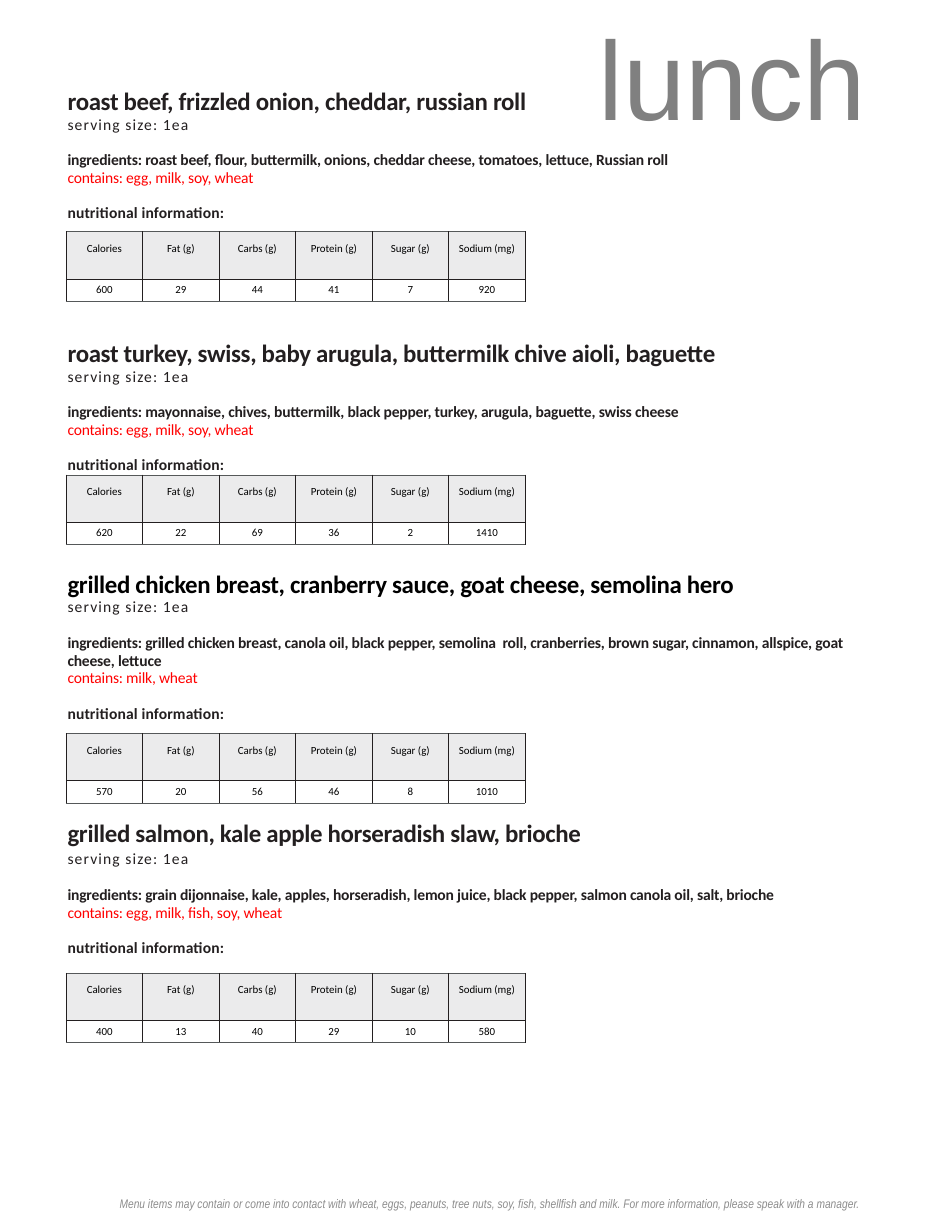
import pptx
import pptx.dml.color
import pptx.enum.text
import pptx.oxml
import pptx.oxml.ns
import pptx.util

colour = pptx.dml.color.RGBColor.from_string
Pt = pptx.util.Pt
ALIGN = pptx.enum.text.PP_ALIGN
ANCHOR = pptx.enum.text.MSO_ANCHOR

deck = pptx.Presentation()
deck.slide_width = pptx.util.Inches(8.5)
deck.slide_height = pptx.util.Inches(11)
page = deck.slides.add_slide(deck.slide_layouts[5])


def place(left, top, width, height):
    """Turn percentages of the slide's width and height into lengths."""
    across, down = deck.slide_width / 100, deck.slide_height / 100
    return [int(left * across), int(top * down), int(width * across), int(height * down)]


def write(para, text, size, ink, spacing=0, **font):
    """Add a span; spacing is the letter spacing in points."""
    span = para.add_run()
    span.text = text
    for name, value in {"name": "Calibri", "size": Pt(size), "bold": False, **font}.items():
        setattr(span.font, name, value)
    span.font.color.rgb = colour(ink)
    if spacing:
        span.font._element.set("spc", str(round(spacing * 100)))


INK, BLACK, RED, RULE = "231F20", "000000", "FF0000", "555859"
LEFT, TEXT_WIDTH, TABLE_WIDTH = 6.94, 86.82, 48.24
HEADER_ROW, VALUE_ROW = 3.82, 1.82
FLUSH = {"margin_left": 0, "margin_top": 0, "margin_right": 0, "margin_bottom": 0}
LINE = Pt(11.4)
NUTRIENTS = ["Calories", "Fat (g)", "Carbs (g)", "Protein (g)", "Sugar (g)", "Sodium (mg)"]

title = page.shapes.title
title.left, title.top, title.width, title.height = place(53.88, -0.27, 46.12, 11.91)
for name, value in {"vertical_anchor": ANCHOR.BOTTOM, "margin_bottom": 0,
                    "auto_size": pptx.enum.text.MSO_AUTO_SIZE.NONE}.items():
    setattr(title.text_frame, name, value)
title.text_frame.paragraphs[0].alignment = ALIGN.CENTER
write(title.text_frame.paragraphs[0], "lunch", 72, "808080", name="Arial")

# name, heading colour, heading line, serving line, ingredients, allergens,
# text top, text height, table top, nutrient values
dishes = [
    ("roast beef, frizzled onion, cheddar, russian roll", INK, Pt(18.6), LINE,
     "roast beef, flour, buttermilk, onions, cheddar cheese, tomatoes, lettuce, Russian roll",
     "egg, milk, soy, wheat", 6.91, 11, 18.82, [600, 29, 44, 41, 7, 920]),
    ("roast turkey, swiss, baby arugula, buttermilk chive aioli, baguette", INK, Pt(18.6), LINE,
     "mayonnaise, chives, buttermilk, black pepper, turkey, arugula, baguette, swiss cheese",
     "egg, milk, soy, wheat", 27.36, 11, 38.55, [620, 22, 69, 36, 2, 1410]),
    ("grilled chicken breast, cranberry sauce, goat cheese, semolina hero", BLACK, Pt(18.6), LINE,
     "grilled chicken breast, canola oil, black pepper, semolina  roll, cranberries, "
     "brown sugar, cinnamon, allspice, goat cheese, lettuce",
     "milk, wheat", 46.09, 12.36, 59.55, [570, 20, 56, 46, 8, 1010]),
    ("grilled salmon, kale apple horseradish slaw, brioche", INK, 1.0, 1.0,
     "grain dijonnaise, kale, apples, horseradish, lemon juice, black pepper, "
     "salmon canola oil, salt, brioche",
     "egg, milk, fish, soy, wheat", 66.27, 11.27, 79, [400, 13, 40, 29, 10, 580]),
]

for (dish, heading_ink, heading_line, serving_line, ingredients, allergens,
     text_top, text_height, table_top, values) in dishes:
    box = page.shapes.add_textbox(*place(LEFT, text_top, TEXT_WIDTH, text_height))
    for name, value in {**FLUSH, "margin_top": Pt(1), "word_wrap": True}.items():
        setattr(box.text_frame, name, value)
    # text, size, colour, letter spacing, bold, line spacing, space before
    lines = [
        (dish, 16, heading_ink, -0.2, True, heading_line, Pt(1)),
        ("serving size: 1ea", 10, INK, 0.75, False, serving_line,
         Pt(1) if serving_line == 1.0 else 0),
        ("ingredients: " + ingredients, 10, INK, -0.1, True, LINE, LINE),
        ("contains: " + allergens, 10, RED, -0.1, False, LINE, 0),
        ("nutritional information:", 10, INK, 0.1, True, LINE, LINE),
    ]
    for index, (text, size, ink, spacing, bold, line, before) in enumerate(lines):
        para = box.text_frame.add_paragraph() if index else box.text_frame.paragraphs[0]
        para.line_spacing, para.space_before = line, before
        para._p.get_or_add_pPr().set("marL", str(Pt(1)))
        write(para, text, size, ink, spacing, bold=bold)

    table = page.shapes.add_table(
        2, len(NUTRIENTS), *place(LEFT, table_top, TABLE_WIDTH, HEADER_ROW + VALUE_ROW)).table
    table.first_row = table.horz_banding = False
    for row, height in zip(table.rows, (HEADER_ROW, VALUE_ROW)):
        row.height = place(0, 0, 0, height)[3]
    for row_index, (texts, inset) in enumerate([(NUTRIENTS, 6.5), (values, 3)]):
        for column_index, text in enumerate(texts):
            cell = table.cell(row_index, column_index)
            for name, value in {**FLUSH, "margin_top": Pt(inset)}.items():
                setattr(cell, name, value)
            cell.text_frame.paragraphs[0].alignment = ALIGN.CENTER
            write(cell.text_frame.paragraphs[0], str(text), 7, BLACK)
            edges = [("lnL", INK, 0.25), ("lnR", INK, 0.25),
                     ("lnT", INK if row_index else RULE, 0.5),
                     ("lnB", RULE if row_index else INK, 0.5)]
            for edge, ink, weight in edges:
                cell._tc.get_or_add_tcPr().append(pptx.oxml.parse_xml(
                    f'<a:{edge} {pptx.oxml.ns.nsdecls("a")} w="{Pt(weight)}">'
                    f'<a:solidFill><a:srgbClr val="{ink}"/></a:solidFill></a:{edge}>'))
            if row_index:
                cell.fill.background()
            else:
                cell.fill.solid()
                cell.fill.fore_color.rgb = colour("EBEBEC")

notice = page.shapes.add_textbox(*place(LEFT, 97.09, 89.18, 1.18))
for name, value in {**FLUSH, "word_wrap": True}.items():
    setattr(notice.text_frame, name, value)
notice.text_frame.paragraphs[0].alignment = ALIGN.CENTER
write(notice.text_frame.paragraphs[0],
      "Menu items may contain or come into contact with wheat, eggs, peanuts, tree nuts, soy, "
      "fish, shellfish and milk. For more information, please speak with a manager.",
      8, "8C8C8C", name="Arial Narrow", italic=True)

deck.save("out.pptx")
